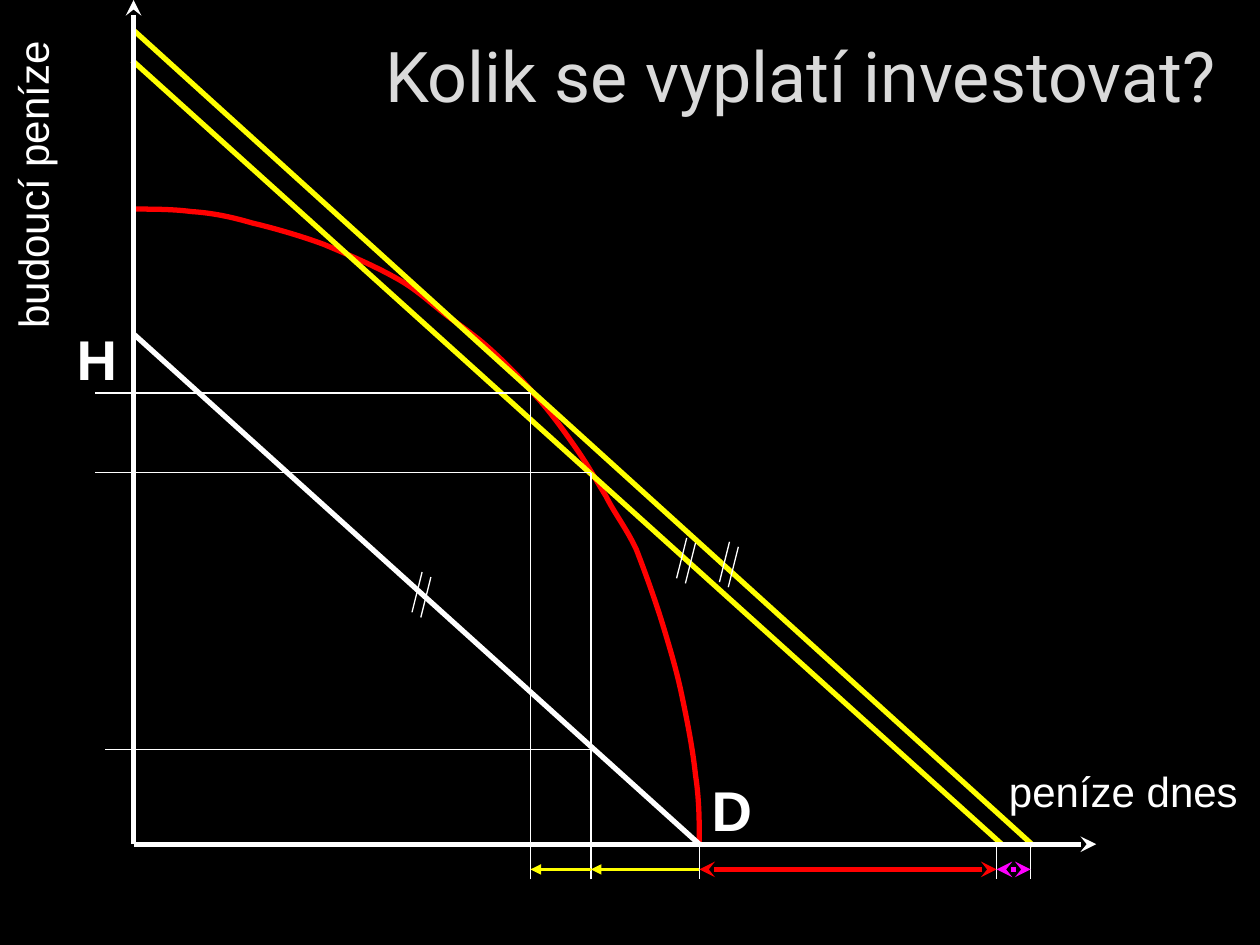
"""Build the slide on how much is worth investing, as a two-period money diagram."""
import lxml.etree
import pptx
import pptx.dml.color
import pptx.enum.shapes
import pptx.enum.text
import pptx.oxml.ns
import pptx.util
from pptx.util import Inches

BLACK = pptx.dml.color.RGBColor(0x00, 0x00, 0x00)
WHITE = pptx.dml.color.RGBColor(0xFF, 0xFF, 0xFF)
GREY = pptx.dml.color.RGBColor(0xDA, 0xDA, 0xDA)
RED = pptx.dml.color.RGBColor(0xFF, 0x00, 0x00)
YELLOW = pptx.dml.color.RGBColor(0xFF, 0xFF, 0x00)
MAGENTA = pptx.dml.color.RGBColor(0xFF, 0x00, 0xFF)

qn = pptx.oxml.ns.qn

ORIGIN_X, ORIGIN_Y = 1.06, 6.7
INVEST_MORE, INVEST_LESS, WEALTH = 4.21, 4.69, 5.55
VALUE_LESS, VALUE_MORE = 7.91, 8.18
ARROW_Y, GUIDE_END = 6.9, 6.98
THIN, MEDIUM, THICK = 0.75, 2, 3


def add_line(shapes, start, end, color, width, head=None, tail=None):
    line = shapes.add_connector(
        pptx.enum.shapes.MSO_CONNECTOR.STRAIGHT, *map(Inches, start + end))
    line.line.color.rgb = color
    line.line.width = pptx.util.Pt(width)
    outline = line.line._get_or_add_ln()
    for tag, arrow in (("a:headEnd", head), ("a:tailEnd", tail)):
        if arrow:
            lxml.etree.SubElement(outline, qn(tag), type=arrow)
    lxml.etree.SubElement(line._element.spPr, qn("a:effectLst"))


def add_label(text, left, top, width, height, size, bold=False, rotation=0):
    label = slide.shapes.add_textbox(*map(Inches, (left, top, width, height)))
    label.rotation = rotation
    label.text_frame.word_wrap = True
    label.text_frame.auto_size = pptx.enum.text.MSO_AUTO_SIZE.SHAPE_TO_FIT_TEXT
    paragraph = label.text_frame.paragraphs[0]
    paragraph.text = text
    paragraph.font.name = "Arial"
    paragraph.font.size = pptx.util.Pt(size)
    paragraph.font.bold = bold
    paragraph.font.color.rgb = WHITE


presentation = pptx.Presentation()
presentation.slide_width, presentation.slide_height = Inches(10), Inches(7.5)
slide = presentation.slides.add_slide(presentation.slide_layouts[5])
slide.background.fill.solid()
slide.background.fill.fore_color.rgb = BLACK

title = slide.shapes.title
title.left, title.top, title.width, title.height = map(Inches, (1.85, -0.03, 9, 1.25))
title.text_frame.vertical_anchor = pptx.enum.text.MSO_ANCHOR.MIDDLE
heading = title.text_frame.paragraphs[0]
heading.text = "Kolik se vyplatí investovat?"
heading.alignment = pptx.enum.text.PP_ALIGN.CENTER
heading.font.name = "Roboto"
heading.font.size = pptx.util.Pt(40)
heading.font.color.rgb = GREY

add_line(slide.shapes, (WEALTH, 6.66), (WEALTH, GUIDE_END), WHITE, THIN)

curve_points = [
    (5.55, 6.52), (5.55, 6.35), (5.52, 6.15),
    (5.5, 5.96), (5.46, 5.75), (5.42, 5.56),
    (5.38, 5.36), (5.33, 5.19), (5.27, 4.99),
    (5.21, 4.79), (5.12, 4.54), (5.05, 4.36),
    (4.97, 4.19), (4.88, 4.08), (4.81, 3.94),
    (4.73, 3.81), (4.67, 3.7), (4.58, 3.57),
    (4.49, 3.44), (4.37, 3.27), (4.25, 3.14),
    (4.14, 3.01), (4.02, 2.89), (3.9, 2.78),
    (3.78, 2.67), (3.66, 2.59), (3.54, 2.5),
    (3.41, 2.4), (3.3, 2.29), (3.13, 2.2),
    (2.97, 2.11), (2.76, 2.02), (2.57, 1.94),
    (2.38, 1.87), (2.17, 1.81), (2, 1.77),
    (1.83, 1.72), (1.68, 1.69), (1.52, 1.68),
    (1.37, 1.66), (1.21, 1.66), (1.06, 1.66),
]
builder = slide.shapes.build_freeform(Inches(WEALTH), Inches(ORIGIN_Y))
builder.add_line_segments([(Inches(x), Inches(y)) for x, y in curve_points], close=False)
opportunities = builder.convert_to_shape()
opportunities.shadow.inherit = False
opportunities.fill.background()
opportunities.line.color.rgb = RED
opportunities.line.width = pptx.util.Pt(THICK)
outline_path = opportunities._element.find(".//" + qn("a:path"))
segments = outline_path.findall(qn("a:lnTo"))
for first in range(0, len(segments), 3):
    bezier = lxml.etree.SubElement(outline_path, qn("a:cubicBezTo"))
    for segment in segments[first:first + 3]:
        bezier.append(segment[0])
        outline_path.remove(segment)

for start, end, color, tail in (
    ((1.05, 0.48), (7.95, ORIGIN_Y), YELLOW, None),
    ((ORIGIN_X, 0.24), (8.2, 6.71), YELLOW, None),
    ((ORIGIN_X, ORIGIN_Y), (8.7, ORIGIN_Y), WHITE, "stealth"),
    ((ORIGIN_X, ORIGIN_Y), (ORIGIN_X, 0), WHITE, "stealth"),
    ((ORIGIN_X, 2.65), (WEALTH, ORIGIN_Y), WHITE, None),
):
    add_line(slide.shapes, start, end, color, THICK, tail=tail)

add_label("peníze dnes", 7.91, 6.03, 2.13, 0.5, 24)
add_label("budoucí peníze", -1.1, 1.1, 2.71, 0.5, 24, rotation=270)
add_label("D", 5.55, 6.11, 0.47, 0.63, 32, bold=True)
add_label("H", 0.51, 2.53, 0.47, 0.63, 32, bold=True)

for start, end in (
    ((INVEST_LESS, GUIDE_END), (INVEST_LESS, 3.75)),
    ((INVEST_LESS, 3.75), (0.75, 3.75)),
    ((INVEST_LESS, 5.95), (0.83, 5.95)),
    ((INVEST_MORE, GUIDE_END), (INVEST_MORE, 3.12)),
    ((INVEST_MORE, 3.12), (0.75, 3.12)),
    ((VALUE_LESS, ORIGIN_Y), (VALUE_LESS, GUIDE_END)),
    ((VALUE_MORE, ORIGIN_Y), (VALUE_MORE, GUIDE_END)),
):
    add_line(slide.shapes, start, end, WHITE, THIN)

for start_x, end_x, color, width, head, tail in (
    (WEALTH, INVEST_LESS, YELLOW, MEDIUM, None, "triangle"),
    (WEALTH, VALUE_LESS, RED, THICK, "stealth", "stealth"),
    (INVEST_LESS, INVEST_MORE, YELLOW, MEDIUM, None, "triangle"),
    (VALUE_LESS, VALUE_MORE, MAGENTA, THICK, "stealth", "stealth"),
):
    add_line(slide.shapes, (start_x, ARROW_Y), (end_x, ARROW_Y), color, width, head, tail)

for mark_x, mark_y in ((3.35, 4.54), (5.45, 4.27), (5.79, 4.3)):
    parallel_mark = slide.shapes.add_group_shape()
    for x, y in ((mark_x, mark_y), (mark_x + 0.07, mark_y + 0.04)):
        add_line(parallel_mark.shapes, (x, y), (x - 0.08, y + 0.32), WHITE, THIN)

presentation.save("out.pptx")
